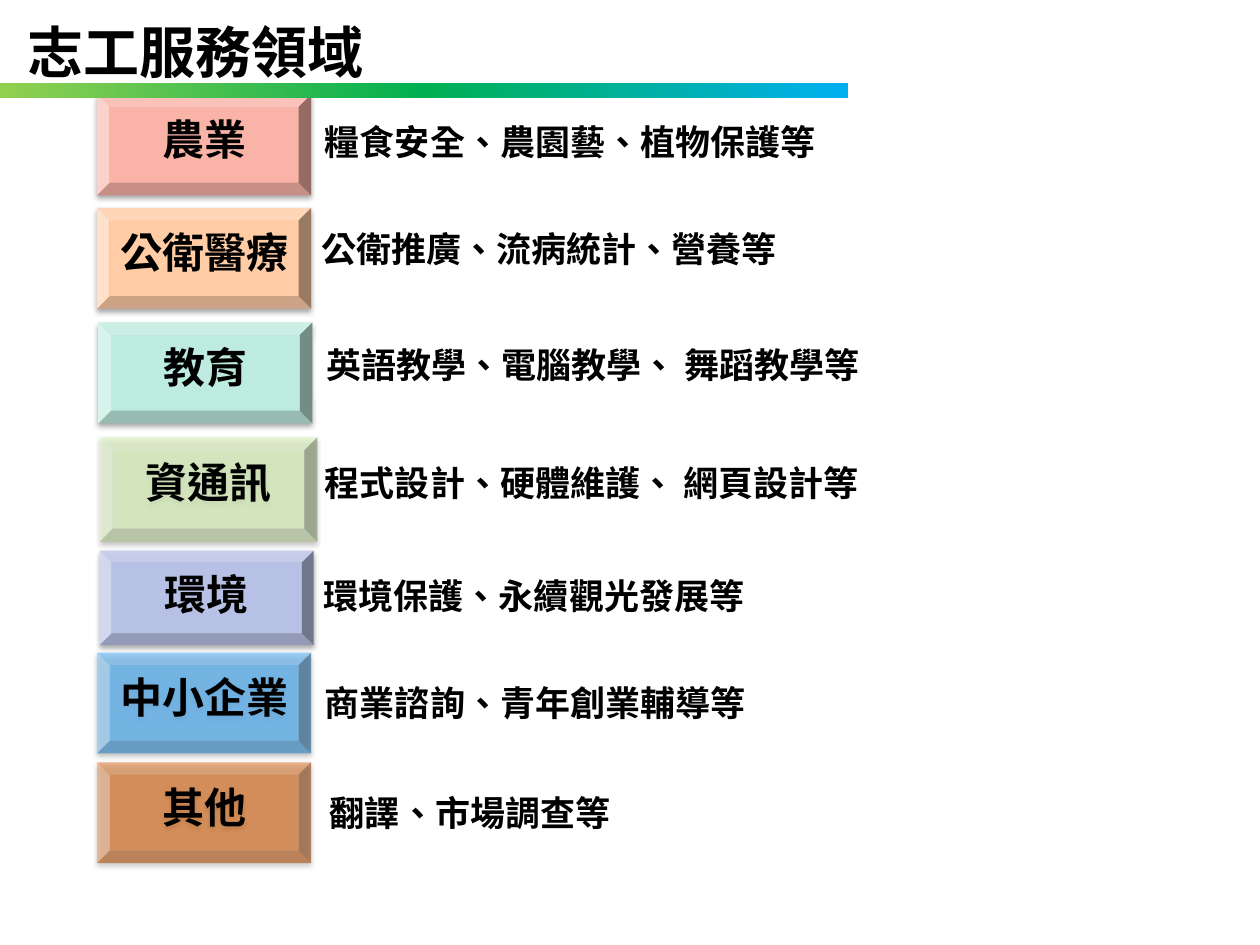
from lxml import etree
from pptx import Presentation
from pptx.dml.color import RGBColor
from pptx.enum.shapes import MSO_SHAPE
from pptx.enum.text import MSO_ANCHOR, MSO_AUTO_SIZE, PP_ALIGN
from pptx.oxml import parse_xml
from pptx.oxml.ns import nsdecls, qn
from pptx.util import Inches, Pt

BEVEL, RECTANGLE = MSO_SHAPE.BEVEL, MSO_SHAPE.RECTANGLE
TOP = MSO_ANCHOR.TOP
NO_AUTOFIT = MSO_AUTO_SIZE.NONE
LEFT, CENTER = PP_ALIGN.LEFT, PP_ALIGN.CENTER
FONT = "Noto Sans CJK SC"

COLORS = {
    "text": "000000",
    "white": "FFFFFF",
    "agriculture": "F9B3A7",
    "health": "FFCCA6",
    "education": "BEEBDF",
    "ict": "DCF7BA",
    "environment": "B8C2E9",
    "business": "4FADF3",
    "other": "D85C00",
    "bar_start": "92D050",
    "bar_middle": "00B050",
    "bar_end": "00B0F0",
}

SHADOW = f"""<a:effectLst {nsdecls('a')}>
  <a:outerShdw blurRad="{Pt(3.1)}" dist="{Pt(1.8)}" dir="5400000" rotWithShape="0">
    <a:srgbClr val="000000"><a:alpha val="35000"/></a:srgbClr>
  </a:outerShdw>
</a:effectLst>"""


def write_text(shape, text, size, alignment=LEFT, wrap=True):
    """Put one bold line at the top of the shape, in Traditional Chinese."""
    frame = shape.text_frame
    frame.text = text
    frame.word_wrap = wrap
    frame.auto_size = NO_AUTOFIT
    frame.vertical_anchor = TOP
    paragraph = frame.paragraphs[0]
    paragraph.alignment = alignment
    font = paragraph.runs[0].font
    font.name, font.size, font.bold = FONT, Pt(size), True
    font.color.rgb = RGBColor.from_string(COLORS["text"])
    properties = paragraph.runs[0]._r.get_or_add_rPr()
    properties.set("lang", "zh-TW")
    etree.SubElement(properties, qn("a:ea")).set("typeface", FONT)


def fill_solid(shape, color, opacity=100):
    shape.fill.solid()
    shape.fill.fore_color.rgb = RGBColor.from_string(COLORS[color])
    if opacity < 100:
        color_element = shape._element.spPr.find(qn("a:solidFill"))[0]
        etree.SubElement(color_element, qn("a:alpha")).set("val", str(opacity * 1000))


presentation = Presentation()
presentation.slide_width, presentation.slide_height = Inches(10), Inches(7.5)
slide = presentation.slides.add_slide(presentation.slide_layouts[5])

title = slide.shapes.title
title.left, title.top = Inches(0.12), Inches(0.09)
title.width, title.height = Inches(7.63), Inches(0.64)
write_text(title, "志工服務領域", 32)

# label, colour, opacity, button box, description, description box, description opacity
fields = [
    ("農業", "agriculture", 100, (0.77, 0.75, 1.7, 0.8),
     "糧食安全、農園藝、植物保護等", (2.48, 0.91, 6.25, 0.49), 0),
    ("公衛醫療", "health", 100, (0.77, 1.65, 1.7, 0.8),
     "公衛推廣、流病統計、營養等", (2.45, 1.76, 6.03, 0.49), 0),
    ("教育", "education", 100, (0.78, 2.56, 1.7, 0.8),
     "英語教學、電腦教學、 舞蹈教學等", (2.49, 2.68, 6.29, 0.49), 50),
    ("資通訊", "ict", 64, (0.79, 3.47, 1.73, 0.83),
     "程式設計、硬體維護、 網頁設計等", (2.48, 3.61, 5.61, 0.49), 0),
    ("環境", "environment", 95, (0.79, 4.37, 1.7, 0.75),
     "環境保護、永續觀光發展等", (2.47, 4.51, 5.82, 0.49), 0),
    ("中小企業", "business", 68, (0.77, 5.18, 1.7, 0.8),
     "商業諮詢、青年創業輔導等", (2.48, 5.36, 5.61, 0.44), 0),
    ("其他", "other", 56, (0.77, 6.05, 1.7, 0.8),
     "翻譯、市場調查等", (2.52, 6.23, 2.52, 0.53), 50),
]

for label, color, opacity, button_box, description, text_box, text_opacity in fields:
    button = slide.shapes.add_shape(BEVEL, *map(Inches, button_box))
    fill_solid(button, color, opacity)
    button.line.fill.background()
    button._element.spPr.append(parse_xml(SHADOW))
    write_text(button, label, 24, CENTER, wrap=False)

    details = slide.shapes.add_textbox(*map(Inches, text_box))
    if text_opacity:
        fill_solid(details, "white", text_opacity)
    write_text(details, description, 20)

bar = slide.shapes.add_shape(RECTANGLE, Inches(0), Inches(0.66), Inches(6.73), Inches(0.12))
bar.shadow.inherit = False
bar.line.fill.background()
bar.fill.gradient()
bar.fill.gradient_angle = 0
stops = bar._element.spPr.find(qn("a:gradFill")).find(qn("a:gsLst"))
for stop in list(stops):
    stops.remove(stop)
for position, color in ((0, "bar_start"), (50, "bar_middle"), (100, "bar_end")):
    stop = etree.SubElement(stops, qn("a:gs"), pos=str(position * 1000))
    etree.SubElement(stop, qn("a:srgbClr"), val=COLORS[color])

presentation.save("out.pptx")
